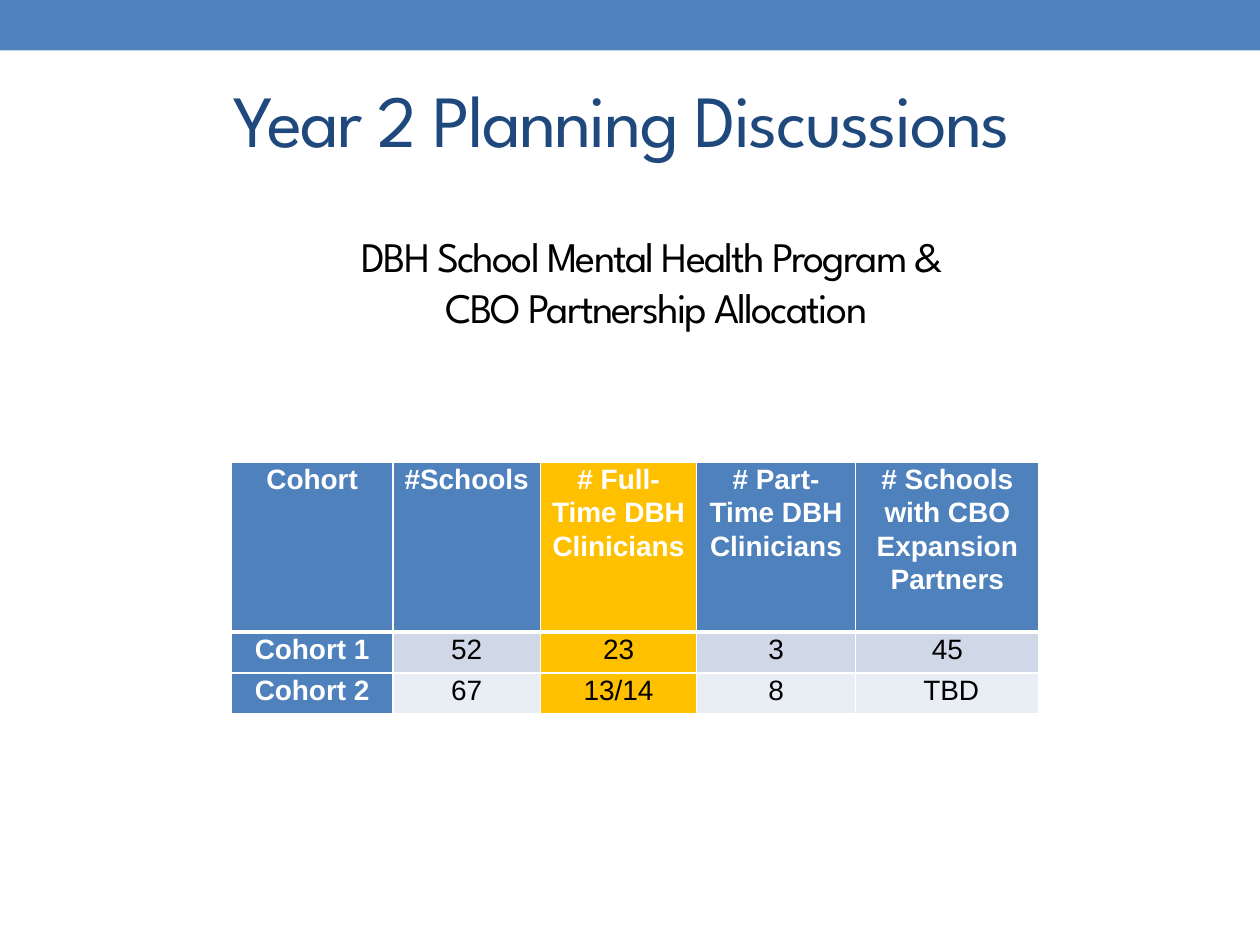
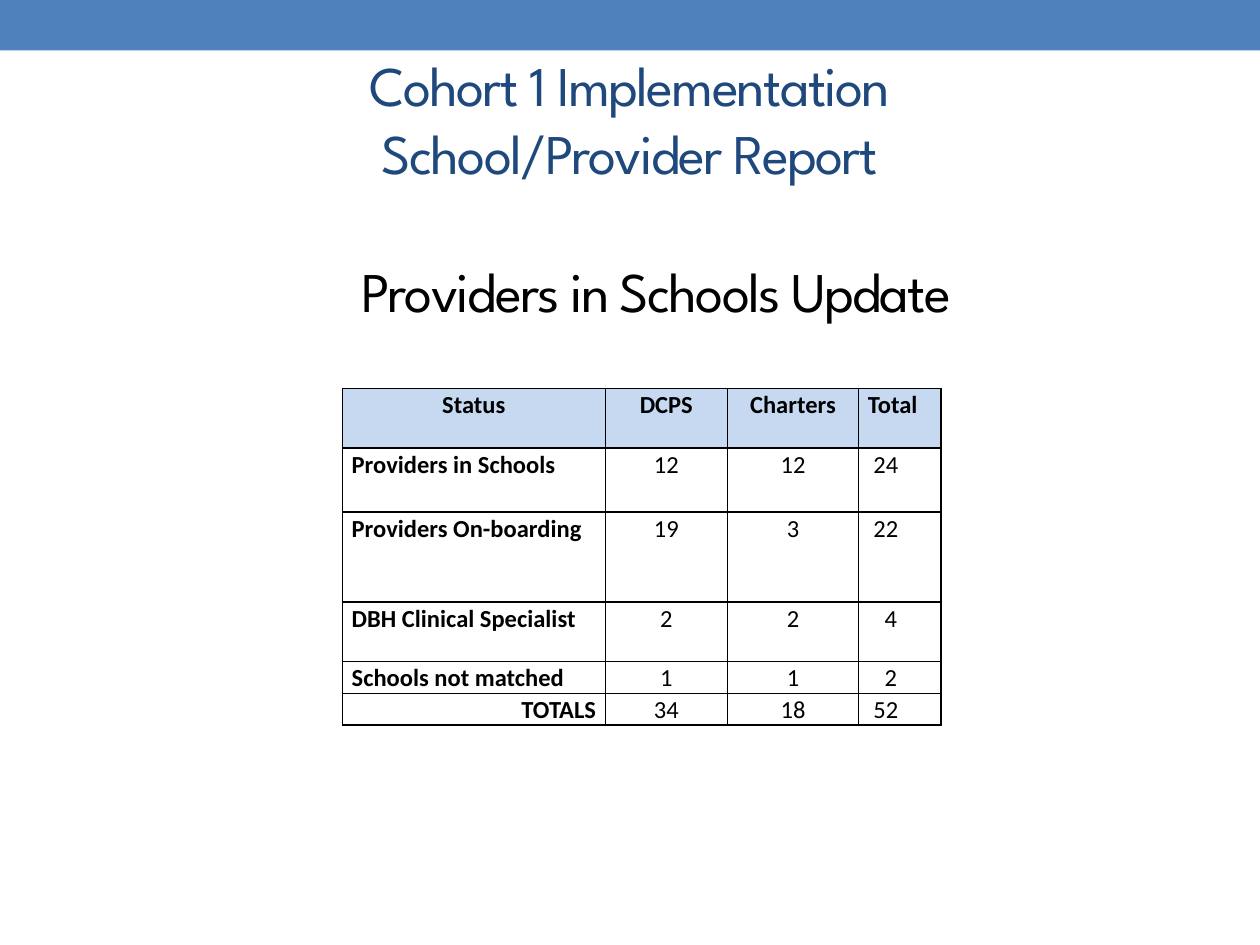
from dataclasses import dataclass

from lxml.etree import SubElement
from pptx import Presentation
from pptx.dml.color import RGBColor
from pptx.enum.shapes import MSO_SHAPE
from pptx.enum.text import MSO_ANCHOR, PP_ALIGN
from pptx.oxml import parse_xml
from pptx.oxml.ns import nsdecls, qn
from pptx.util import Pt

LEFT, CENTER, RIGHT = PP_ALIGN.LEFT, PP_ALIGN.CENTER, PP_ALIGN.RIGHT


@dataclass(frozen=True)
class Theme:
    """Colours, fonts and type sizes of the deck."""
    blue: str = "4F81BD"
    navy: str = "1F497D"
    gold: str = "FFC000"
    pale_blue: str = "C6D9F1"
    band_dark: str = "D0D8E8"
    band_light: str = "E9EDF4"
    black: str = "000000"
    white: str = "FFFFFF"
    display_font: str = "League Spartan"
    allocation_font: str = "Arial"
    status_font: str = "Calibri"
    title_size: float = 42
    large_size: float = 32
    subtitle_size: float = 24
    allocation_size: float = 16
    status_size: float = 14


THEME = Theme()


@dataclass(frozen=True)
class TextBlock:
    """A centred display text and its place."""
    left: float
    top: float
    width: float
    height: float
    paragraphs: tuple[str, ...]
    size: float
    color: str
    anchor: MSO_ANCHOR
    margin_top: float = 0
    margin_bottom: float = 0


@dataclass(frozen=True)
class Entry:
    """The content and look of one table cell."""
    text: str
    fill: str
    color: str = THEME.black
    bold: bool = False
    align: PP_ALIGN = CENTER
    indent: float = 0


@dataclass(frozen=True)
class Grid:
    """A table with its measures, type and rules."""
    left: float
    top: float
    widths: tuple[float, ...]
    heights: tuple[float, ...]
    rows: list[list[Entry]]
    font: str
    size: float
    border: str
    header_rule: float = 1


def title_block(text: str, size: float, margin_bottom: float) -> TextBlock:
    """Describe a slide title."""
    return TextBlock(36, 41.8, 648, 77.8, (text,), size, THEME.navy,
                     MSO_ANCHOR.BOTTOM, margin_bottom=margin_bottom)


def body_block(paragraphs: tuple[str, ...], size: float, height: float, margin_top: float) -> TextBlock:
    """Describe the subtitle area of a slide."""
    return TextBlock(66.2, 113.8, 617.8, height, paragraphs, size, THEME.black,
                     MSO_ANCHOR.TOP, margin_top=margin_top)


def add_span(para, text: str, font: str, size: float, color: str, bold: bool = False):
    """Add one formatted run to a paragraph."""
    span = para.add_run()
    span.text = text
    span.font.name = font
    span.font.size = Pt(size)
    span.font.bold = bold
    span.font.color.rgb = RGBColor.from_string(color)
    return span


def add_text(page, block: TextBlock) -> None:
    """Draw a display text, breaking lines at newlines."""
    box = page.shapes.add_textbox(Pt(block.left), Pt(block.top), Pt(block.width), Pt(block.height))
    frame = box.text_frame
    frame.word_wrap = True
    frame.vertical_anchor = block.anchor
    frame.margin_top = Pt(block.margin_top)
    frame.margin_bottom = Pt(block.margin_bottom)
    for number, text in enumerate(block.paragraphs):
        para = frame.add_paragraph() if number else frame.paragraphs[0]
        para.alignment = CENTER
        for index, line in enumerate(text.split("\n")):
            if index:
                para.add_line_break()
            span = add_span(para, line, THEME.display_font, block.size, block.color)
            span.font._element.set("spc", "-100")


def add_borders(cell, color: str, top: float, bottom: float) -> None:
    """Rule the four sides of a cell."""
    properties = cell._tc.get_or_add_tcPr()
    sides = {"lnL": 1, "lnR": 1, "lnT": top, "lnB": bottom}
    for position, (side, width) in enumerate(sides.items()):
        line = parse_xml(f'<a:{side} {nsdecls("a")} w="{Pt(width)}"/>')
        fill = SubElement(line, qn("a:solidFill"))
        SubElement(fill, qn("a:srgbClr")).set("val", color)
        properties.insert(position, line)


def add_grid(page, grid: Grid) -> None:
    """Draw a table."""
    frame = page.shapes.add_table(len(grid.heights), len(grid.widths), Pt(grid.left), Pt(grid.top),
                                  Pt(sum(grid.widths)), Pt(sum(grid.heights)))
    table = frame.table
    table.first_row = table.horz_banding = False
    for column, width in zip(table.columns, grid.widths):
        column.width = Pt(width)
    for row, height in zip(table.rows, grid.heights):
        row.height = Pt(height)
    for row_number, entries in enumerate(grid.rows):
        for column_number, entry in enumerate(entries):
            cell = table.cell(row_number, column_number)
            cell.margin_left = Pt(5.3 + entry.indent)
            cell.margin_right = Pt(5.3)
            cell.margin_top = cell.margin_bottom = Pt(0)
            cell.fill.solid()
            cell.fill.fore_color.rgb = RGBColor.from_string(entry.fill)
            add_borders(cell, grid.border,
                        top=grid.header_rule if row_number == 1 else 1,
                        bottom=grid.header_rule if row_number == 0 else 1)
            para = cell.text_frame.paragraphs[0]
            para.alignment = entry.align
            para.line_spacing = 1.07
            add_span(para, entry.text, grid.font, grid.size, entry.color, entry.bold)


def allocation_grid() -> Grid:
    """Describe the clinician allocation by cohort."""
    texts = [
        ("Cohort", "#Schools", "# Full-Time DBH Clinicians", "# Part-Time DBH Clinicians",
         "# Schools with CBO Expansion Partners"),
        ("Cohort 1", "52", "23", "3", "45"),
        ("Cohort 2", "67", "13/14", "8", "TBD"),
    ]
    row_fills = (THEME.blue, THEME.band_dark, THEME.band_light)
    rows = []
    for row_number, (line, row_fill) in enumerate(zip(texts, row_fills)):
        entries = []
        for column_number, text in enumerate(line):
            heading = row_number == 0 or column_number == 0
            fill = THEME.gold if column_number == 2 else THEME.blue if heading else row_fill
            entries.append(Entry(text, fill, THEME.white if heading else THEME.black, heading,
                                 indent=4.4 if text == "TBD" else 0))
        rows.append(entries)
    return Grid(132.3, 264.2, (92.2, 84.4, 89.2, 90.8, 105), (97, 23.3, 23.3), rows,
                THEME.allocation_font, THEME.allocation_size, THEME.white, header_rule=3)


def status_grid() -> Grid:
    """Describe the provider status by school type."""
    header = ("Status", "DCPS", "Charters", "Total")
    counts = [
        ("Providers in Schools", 12, 12, 24),
        ("Providers On-boarding", 19, 3, 22),
        ("DBH Clinical Specialist", 2, 2, 4),
        ("Schools not matched", 1, 1, 2),
        ("TOTALS", 34, 18, 52),
    ]
    rows = [[Entry(text, THEME.pale_blue, bold=True, align=LEFT if text == "Total" else CENTER)
             for text in header]]
    for label, dcps, charters, total in counts:
        rows.append([
            Entry(label, THEME.white, bold=True, align=RIGHT if label == "TOTALS" else LEFT),
            Entry(str(dcps), THEME.white),
            Entry(str(charters), THEME.white),
            Entry(str(total), THEME.white, align=LEFT, indent=3.2 if total > 9 else 9.5),
        ])
    return Grid(195.7, 221.9, (150.2, 69.8, 75, 47.2), (34.2, 36.6, 51.4, 33.8, 18.3, 18.3), rows,
                THEME.status_font, THEME.status_size, THEME.black)


def add_page(deck, title: TextBlock, body: TextBlock, grid: Grid) -> None:
    """Add a slide with the top band, title, subtitle and table."""
    page = deck.slides.add_slide(deck.slide_layouts[6])
    band = page.shapes.add_shape(MSO_SHAPE.RECTANGLE, Pt(0), Pt(0), deck.slide_width, Pt(28.8))
    band.shadow.inherit = False
    band.fill.solid()
    band.fill.fore_color.rgb = RGBColor.from_string(THEME.blue)
    band.line.fill.background()
    add_text(page, title)
    add_text(page, body)
    add_grid(page, grid)


def main() -> None:
    """Build and save the deck."""
    deck = Presentation()
    deck.slide_width, deck.slide_height = Pt(720), Pt(540)
    add_page(deck,
             title_block("Year 2 Planning Discussions ", THEME.title_size, 27),
             body_block(("DBH School Mental Health Program & ", "CBO Partnership Allocation"),
                        THEME.subtitle_size, 390.2, 18),
             allocation_grid())
    add_page(deck,
             title_block("Cohort 1 Implementation\nSchool/Provider Report", THEME.large_size, 13.7),
             body_block(("Providers in Schools Update",), THEME.large_size, 419.8, 32.6),
             status_grid())
    deck.save("out.pptx")


if __name__ == "__main__":
    main()
